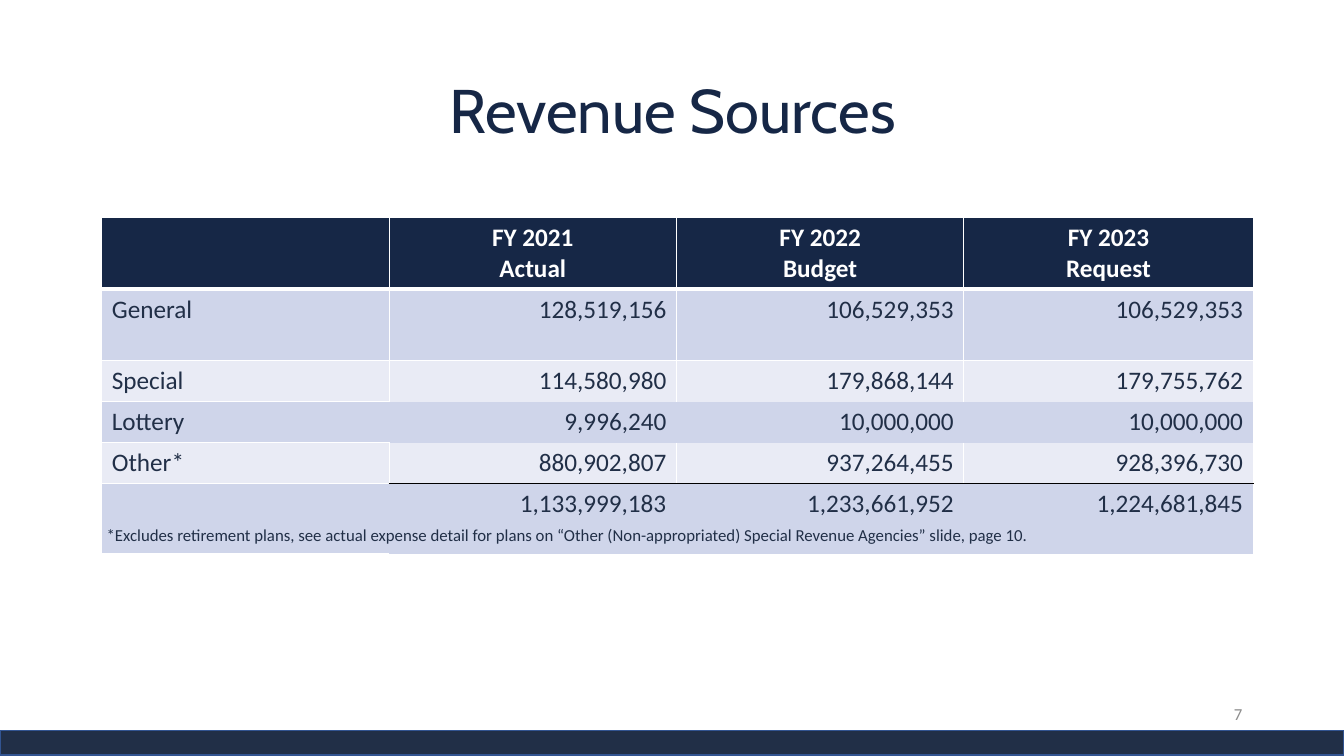
"""Build the Revenue Sources slide with its table of three fiscal years."""
import dataclasses
import typing

import lxml.etree
import pptx
import pptx.dml.color
import pptx.enum.shapes
import pptx.enum.text
import pptx.oxml.ns
import pptx.util

PX = 9144
NAVY = pptx.dml.color.RGBColor(0x16, 0x27, 0x46)
SLATE = pptx.dml.color.RGBColor(0x21, 0x2F, 0x47)
BAR_EDGE = pptx.dml.color.RGBColor(0x32, 0x54, 0x91)
BAND = pptx.dml.color.RGBColor(0xCF, 0xD5, 0xEA)
PALE = pptx.dml.color.RGBColor(0xE9, 0xEB, 0xF5)
GREY = pptx.dml.color.RGBColor(0x8C, 0x8C, 0x8C)
WHITE = pptx.dml.color.RGBColor(0xFF, 0xFF, 0xFF)
BLACK = pptx.dml.color.RGBColor(0, 0, 0)
ALIGN = pptx.enum.text.PP_ALIGN
ANCHOR = pptx.enum.text.MSO_ANCHOR


class Edge(typing.NamedTuple):
    colour: pptx.dml.color.RGBColor
    points: int


Edges = dict[str, Edge]
THIN = Edge(WHITE, 1)
HEAVY = Edge(WHITE, 3)
RULE = Edge(BLACK, 1)
GRID: Edges = dict.fromkeys("LRTB", THIN)
HEADER_GRID: Edges = GRID | {"B": HEAVY}
FIRST_GRID: Edges = GRID | {"T": HEAVY}
OPEN_RIGHT: Edges = dict.fromkeys("LTB", THIN)
OPEN_BOTTOM: Edges = dict.fromkeys("LRT", THIN)
ABOVE_TOTAL: Edges = {"L": THIN, "R": THIN, "B": RULE}


@dataclasses.dataclass(frozen=True)
class RevenueRow:
    label: str
    figures: tuple[str, ...]
    height: int
    fill: pptx.dml.color.RGBColor
    label_edges: Edges
    figure_edges: Edges
    header: bool = False


@dataclasses.dataclass(frozen=True)
class Bar:
    top: int
    height: int
    fill: pptx.dml.color.RGBColor
    edge: pptx.dml.color.RGBColor | None = None


ROWS = (
    RevenueRow("", ("FY 2021\nActual", "FY 2022\nBudget", "FY 2023\nRequest"),
               70, NAVY, HEADER_GRID, HEADER_GRID, header=True),
    RevenueRow("General", ("128,519,156", "106,529,353", "106,529,353"),
               71, BAND, FIRST_GRID, FIRST_GRID),
    RevenueRow("Special", ("114,580,980", "179,868,144", "179,755,762"),
               40, PALE, GRID, OPEN_BOTTOM),
    RevenueRow("Lottery", ("9,996,240", "10,000,000", "10,000,000"),
               40, BAND, OPEN_RIGHT, {}),
    RevenueRow("Other*", ("880,902,807", "937,264,455", "928,396,730"),
               40, PALE, GRID, ABOVE_TOTAL),
    RevenueRow("", ("1,133,999,183", "1,233,661,952", "1,224,681,845"),
               70, BAND, OPEN_RIGHT, {"T": RULE}),
)
COLUMN_WIDTHS = (285, 285, 285, 287)
BARS = (Bar(724, 25, SLATE, BAR_EDGE), Bar(719, 5, WHITE))
FOOTNOTE = ("*Excludes retirement plans, see actual expense detail for plans on "
            "“Other (Non-appropriated) Special Revenue Agencies” slide, page 10.")


def px(*lengths: int) -> list[pptx.util.Emu]:
    """Turn px lengths into EMU."""
    return [pptx.util.Emu(length * PX) for length in lengths]


def write(frame, text: str, *, size: int = 18, font: str = "Calibri",
          colour: pptx.dml.color.RGBColor = SLATE, bold: bool = False,
          align: ALIGN = ALIGN.LEFT, spacing: float | None = None) -> None:
    """Fill a text frame with one formatted paragraph per line."""
    frame.text = text
    for paragraph in frame.paragraphs:
        paragraph.alignment = align
        paragraph.line_spacing = spacing
        for target in (paragraph, *paragraph.runs):
            target.font.size = pptx.util.Pt(size)
            target.font.name = font
            target.font.bold = bold
            target.font.color.rgb = colour


def set_edges(cell, edges: Edges) -> None:
    """Draw the given cell sides and clear the others."""
    properties = cell._tc.get_or_add_tcPr()
    qn = pptx.oxml.ns.qn
    for side in "LRTB":
        line = lxml.etree.SubElement(properties, qn(f"a:ln{side}"))
        if side in edges:
            edge = edges[side]
            line.set("w", str(pptx.util.Pt(edge.points)))
            paint = lxml.etree.SubElement(line, qn("a:solidFill"))
            lxml.etree.SubElement(paint, qn("a:srgbClr"), val=str(edge.colour))
        else:
            lxml.etree.SubElement(line, qn("a:noFill"))


def add_revenue_table(slide) -> None:
    """Add the revenue table."""
    height = sum(row.height for row in ROWS)
    table = slide.shapes.add_table(
        len(ROWS), len(COLUMN_WIDTHS), *px(101, 216, sum(COLUMN_WIDTHS), height)).table
    for column, width in zip(table.columns, COLUMN_WIDTHS):
        column.width = px(width)[0]
    for table_row, row in zip(table.rows, ROWS):
        table_row.height = px(row.height)[0]
        for index, (cell, text) in enumerate(zip(table_row.cells, (row.label, *row.figures))):
            set_edges(cell, row.figure_edges if index else row.label_edges)
            cell.fill.solid()
            cell.fill.fore_color.rgb = row.fill
            figure_align = ALIGN.CENTER if row.header else ALIGN.RIGHT
            write(cell.text_frame, text, bold=row.header,
                  colour=WHITE if row.header else SLATE,
                  align=figure_align if index else ALIGN.LEFT)


def add_bar(slide, bar: Bar) -> None:
    """Add a full-width bar."""
    strip = slide.shapes.add_shape(
        pptx.enum.shapes.MSO_SHAPE.RECTANGLE, *px(0, bar.top, 1333, bar.height))
    strip.shadow.inherit = False
    strip.fill.solid()
    strip.fill.fore_color.rgb = bar.fill
    if bar.edge is None:
        strip.line.fill.background()
    else:
        strip.line.color.rgb = bar.edge
        strip.line.width = pptx.util.Pt(1)


def add_text(slide, box: tuple[int, int, int, int], text: str,
             anchor: ANCHOR = ANCHOR.TOP, **style: typing.Any) -> None:
    """Add a wrapped text box."""
    frame = slide.shapes.add_textbox(*px(*box)).text_frame
    frame.word_wrap = True
    frame.vertical_anchor = anchor
    write(frame, text, **style)


def main() -> None:
    """Build and save the slide."""
    deck = pptx.Presentation()
    deck.slide_width, deck.slide_height = px(1333, 750)
    slide = deck.slides.add_slide(deck.slide_layouts[5])
    title = slide.shapes.title
    title.left, title.top, title.width, title.height = px(92, 40, 1150, 145)
    title.text_frame.vertical_anchor = ANCHOR.MIDDLE
    write(title.text_frame, "Revenue Sources", size=44, font="Cabin", colour=NAVY,
          align=ALIGN.CENTER, spacing=0.9)
    add_revenue_table(slide)
    for bar in BARS:
        add_bar(slide, bar)
    add_text(slide, (942, 688, 300, 40), "7", ANCHOR.MIDDLE,
             size=12, colour=GREY, align=ALIGN.RIGHT)
    add_text(slide, (96, 516, 977, 30), FOOTNOTE, size=12)
    deck.save("out.pptx")


if __name__ == "__main__":
    main()
